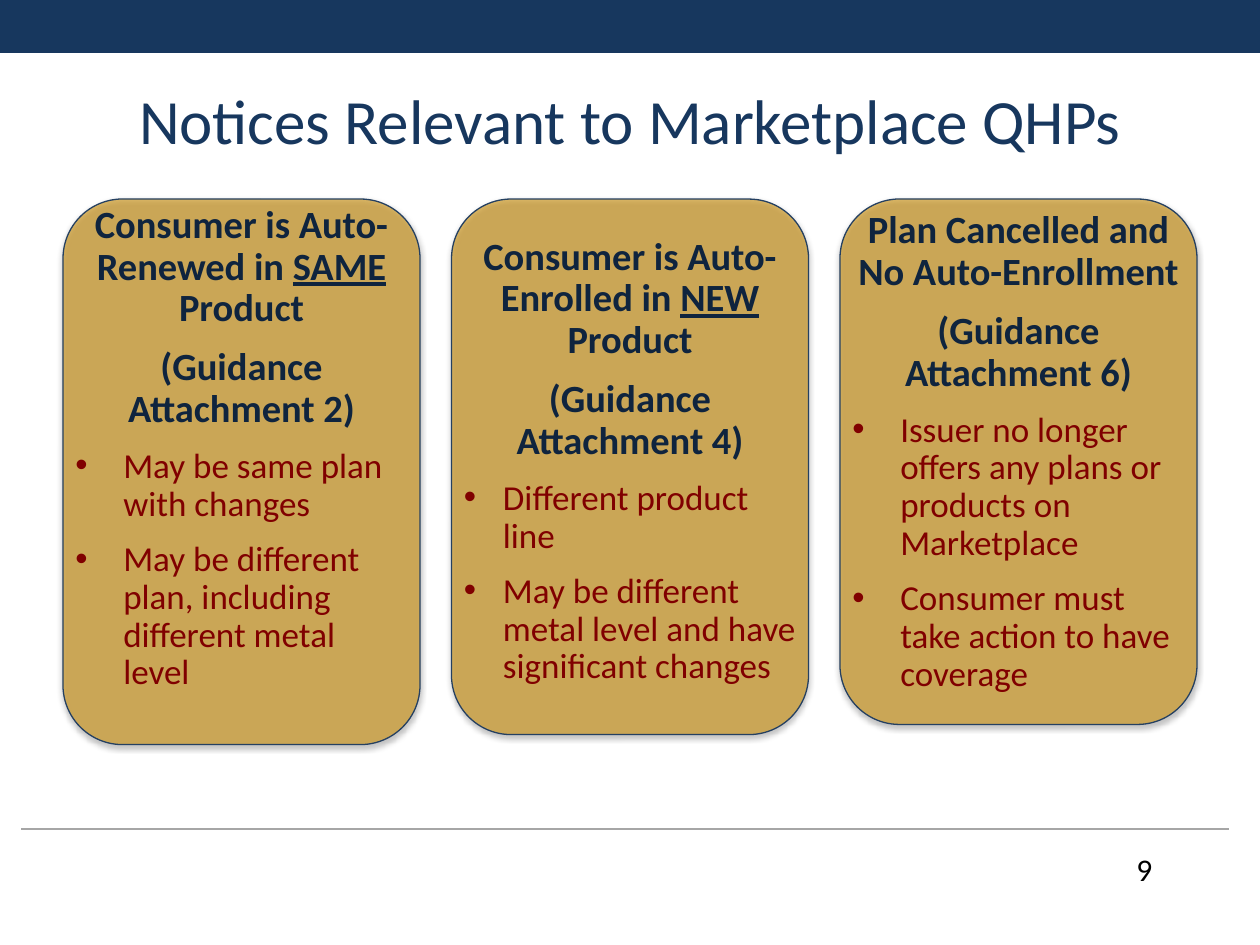
import dataclasses
import pptx
import pptx.dml.color
import pptx.enum.shapes
import pptx.enum.text
import pptx.oxml
import pptx.oxml.ns
import pptx.util
from lxml import etree

WIDE, HIGH = 10, 7.5
MARGIN, GAP, COLS = 0.05 * WIDE, 0.25, 3
CARD = (WIDE - 2 * MARGIN - (COLS - 1) * GAP) / COLS
TOP = 1.58
NAVY, INK, WINE, GOLD = "17375E", "0F243E", "800000", "CE9821"
EDGE, RULE, BLACK = "254061", "A6A6A6", "000000"
SHAPE = pptx.enum.shapes.MSO_SHAPE
ALIGN = pptx.enum.text.PP_ALIGN
ANCHOR = pptx.enum.text.MSO_ANCHOR
NS = pptx.oxml.ns.nsdecls("a")

HEAD = {"size": pptx.util.Pt(22), "bold": True, "name": "Calibri"}
BODY = {"size": pptx.util.Pt(20), "bold": False, "name": "Calibri"}
TITLE = {"size": pptx.util.Pt(36), "name": "Calibri"}
NUMBER = {"size": pptx.util.Pt(18), "name": "Calibri"}
SPACED = {"line_spacing": 0.9, "space_after": pptx.util.Pt(10)}


@dataclasses.dataclass
class Notice:
    lead: str
    key: str
    tail: str
    guide: str
    points: list[str]
    high: float        # card height
    top: float         # text top
    tall: float        # text height
    indent: float
    anchor: object = ANCHOR.MIDDLE


NOTICES = [
    Notice("Consumer is Auto-Renewed in ", "SAME", " Product",
           "(Guidance Attachment 2)",
           ["May be same plan with changes",
            "May be different plan, including different metal level"],
           4.33, 1.58, 4.33, 0.38, ANCHOR.TOP),
    Notice("Consumer is Auto-Enrolled in ", "NEW", " Product",
           "(Guidance Attachment 4)",
           ["Different product line",
            "May be different metal level and have significant changes"],
           4.25, 1.59, 4.15, 0.31),
    Notice("Plan Cancelled and No Auto-Enrollment", "", "",
           "(Guidance Attachment 6)",
           ["Issuer no longer offers any plans or products on Marketplace",
            "Consumer must take action to have coverage"],
           4.17, 1.60, 3.98, 0.38),
]


def box(*sizes: float) -> list:
    return [pptx.util.Inches(size) for size in sizes]


def color(code: str):
    return pptx.dml.color.RGBColor.from_string(code)


def apply(thing, values: dict) -> None:
    for name, value in values.items():
        setattr(thing, name, value)


def style(font, values: dict, code: str) -> None:
    apply(font, values)
    font.color.rgb = color(code)


def paint(shape, code: str) -> None:
    shape.shadow.inherit = False
    shape.fill.solid()
    shape.fill.fore_color.rgb = color(code)


def draw_card(slide, left: float, high: float) -> None:
    card = slide.shapes.add_shape(SHAPE.ROUNDED_RECTANGLE,
                                  *box(left, TOP, CARD, high))
    paint(card, GOLD)
    card.line.color.rgb = color(EDGE)
    card.line.width = pptx.util.Pt(0.75)
    # Translucent fill and soft shadow
    props = card._element.spPr
    tint = props.find(".//" + pptx.oxml.ns.qn("a:srgbClr"))
    etree.SubElement(tint, pptx.oxml.ns.qn("a:alpha"), val="67000")
    props.find(pptx.oxml.ns.qn("a:effectLst")).append(pptx.oxml.parse_xml(
        f'<a:outerShdw {NS} blurRad="40000" dist="23000" dir="5400000" '
        f'rotWithShape="0"><a:srgbClr val="{BLACK}">'
        '<a:alpha val="35000"/></a:srgbClr></a:outerShdw>'))


def add_bullet(para, indent: float) -> None:
    props = para._p.get_or_add_pPr()
    props.set("marL", str(pptx.util.Inches(indent)))
    props.set("indent", str(-pptx.util.Inches(indent)))
    for tag in (f'<a:buFont {NS} typeface="Arial"/>',
                f'<a:buChar {NS} char="•"/>'):
        props.append(pptx.oxml.parse_xml(tag))


def write_card(slide, left: float, item: Notice) -> None:
    frame = slide.shapes.add_textbox(
        *box(left, item.top, CARD, item.tall)).text_frame
    apply(frame, {"word_wrap": True, "vertical_anchor": item.anchor})
    # Centred heading, with its key word underlined
    heads = [[item.lead, item.key, item.tail], [item.guide]]
    for row, parts in enumerate(heads):
        para = frame.add_paragraph() if row else frame.paragraphs[0]
        apply(para, SPACED | {"alignment": ALIGN.CENTER})
        for part in filter(None, parts):
            run = para.add_run()
            run.text = part
            style(run.font, HEAD, INK)
            if part == item.key:
                run.font.underline = True
    # Bulleted points
    for point in item.points:
        para = frame.add_paragraph()
        add_bullet(para, item.indent)
        apply(para, SPACED)
        run = para.add_run()
        run.text = point
        style(run.font, BODY, WINE)


def main() -> None:
    deck = pptx.Presentation()
    deck.slide_width, deck.slide_height = box(WIDE, HIGH)
    slide = deck.slides.add_slide(deck.slide_layouts[5])

    # Top band and footer rule
    band = slide.shapes.add_shape(SHAPE.RECTANGLE, *box(0, 0, WIDE, 0.42))
    paint(band, NAVY)
    band.line.fill.background()
    rule = slide.shapes.add_connector(
        pptx.enum.shapes.MSO_CONNECTOR.STRAIGHT, *box(0.17, 6.58, 9.75, 6.58))
    rule.line.color.rgb = color(RULE)
    rule.line.width = pptx.util.Pt(0.75)
    etree.SubElement(rule._element.spPr, pptx.oxml.ns.qn("a:effectLst"))

    # Title
    title = slide.shapes.title
    place = box(MARGIN, 0.42, WIDE - 2 * MARGIN, 1.13)
    apply(title, dict(zip(("left", "top", "width", "height"), place)))
    title.text_frame.text = "Notices Relevant to Marketplace QHPs"
    title.text_frame.vertical_anchor = ANCHOR.MIDDLE
    para = title.text_frame.paragraphs[0]
    apply(para, {"alignment": ALIGN.CENTER, "line_spacing": 0.9})
    style(para.runs[0].font, TITLE, NAVY)

    # Page number
    page = slide.shapes.add_textbox(*box(8.92, 6.7, 0.58, 0.4)).text_frame
    page.word_wrap = True
    page.text = "9"
    style(page.paragraphs[0].runs[0].font, NUMBER, BLACK)

    # Notice cards
    for col, item in enumerate(NOTICES):
        left = MARGIN + col * (CARD + GAP)
        draw_card(slide, left, item.high)
        write_card(slide, left, item)

    deck.save("out.pptx")


if __name__ == "__main__":
    main()
